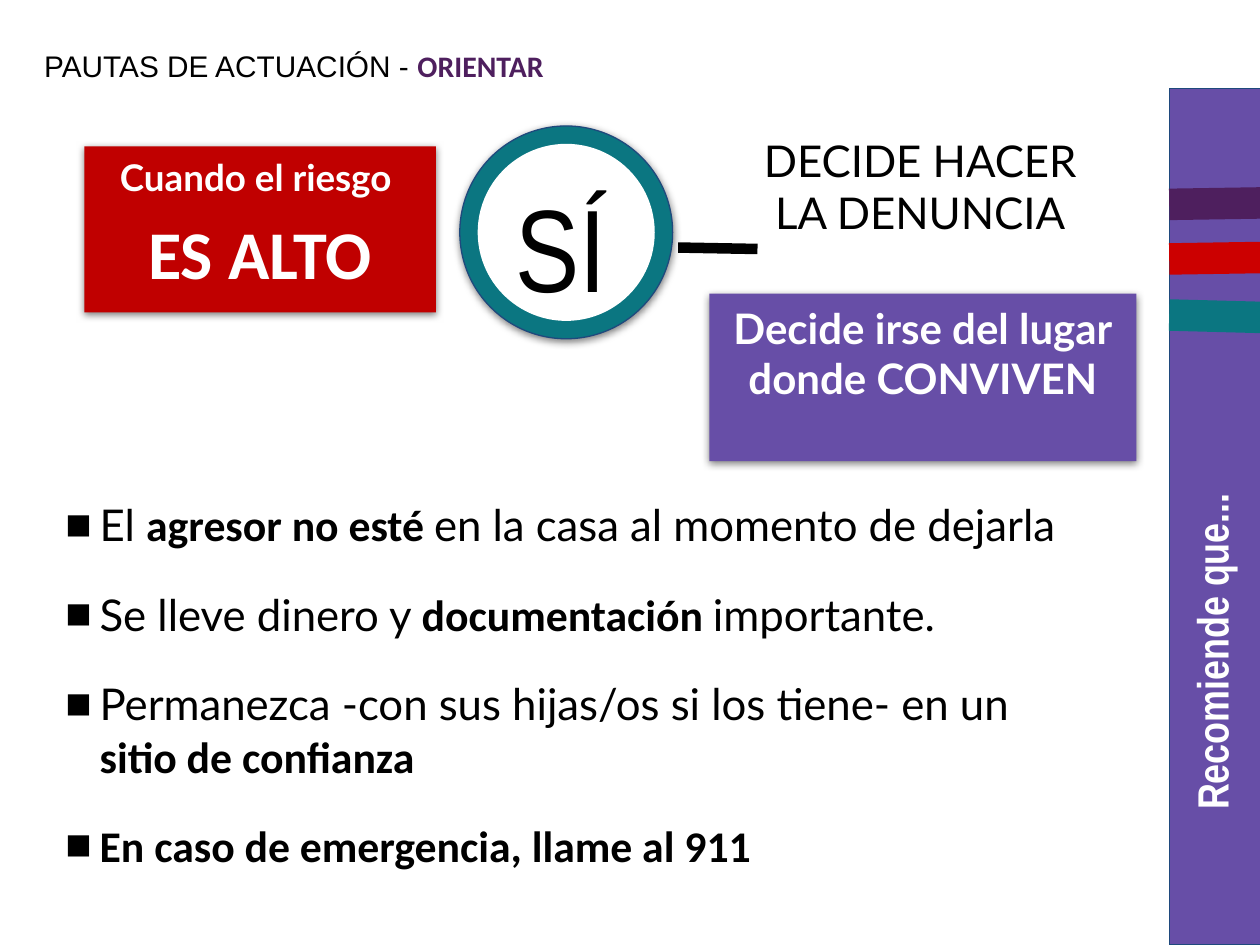
from collections import namedtuple

from lxml import etree
from pptx import Presentation
from pptx.dml.color import RGBColor
from pptx.enum.shapes import MSO_CONNECTOR as Connector, MSO_SHAPE as Shape
from pptx.enum.text import MSO_ANCHOR as Anchor, PP_ALIGN as Align
from pptx.oxml.ns import qn
from pptx.util import Cm, Pt

Box = namedtuple("Box", "left top width height")

BLACK, WHITE, NAVY = "000000", "FFFFFF", "1F497D"
PURPLE, PLUM, TEAL = "674EA7", "4E1F5E", "0B7681"
DARK_RED, RED = "C00000", "CC0000"


def color(value):
    return RGBColor.from_string(value)


def inside(box, left, top, width, height):
    """Return a box whose position is given relative to another box."""
    return Box(box.left + left, box.top + top, width, height)


def style(size, font, fill=BLACK, bold=False):
    return {"size": Pt(size), "name": font, "bold": bold, "color": fill}


def add_runs(paragraph, runs, **paragraph_format):
    """Fill a paragraph with (text, style) pairs."""
    for name, value in paragraph_format.items():
        setattr(paragraph, name, value)
    for text, run_style in runs:
        run = paragraph.add_run()
        run.text = text
        for name, value in run_style.items():
            if name == "color":
                run.font.color.rgb = color(value)
            else:
                setattr(run.font, name, value)


def write(shape, paragraphs, margin=0.18, anchor=Anchor.TOP, **paragraph_format):
    """Write paragraphs, each a list of (text, style) pairs, and return them."""
    frame = shape.text_frame
    frame_format = {"word_wrap": True, "vertical_anchor": anchor}
    for side in ("left", "top", "right", "bottom"):
        frame_format[f"margin_{side}"] = Cm(margin)
    for name, value in frame_format.items():
        setattr(frame, name, value)
    for index, runs in enumerate(paragraphs):
        paragraph = frame.add_paragraph() if index else frame.paragraphs[0]
        add_runs(paragraph, runs, **paragraph_format)
    return frame.paragraphs


def add_text(slide, box, paragraphs, **text_format):
    shape = slide.shapes.add_textbox(*map(Cm, box))
    return write(shape, paragraphs, **text_format)


def add_shadow(shape):
    effects = shape._element.spPr.find(qn("a:effectLst"))
    shadow = etree.SubElement(effects, qn("a:outerShdw"), blurRad=str(Pt(4.5)),
                              dist=str(Pt(1.5)), dir="5400000", rotWithShape="0")
    shade = etree.SubElement(shadow, qn("a:srgbClr"), val=BLACK)
    etree.SubElement(shade, qn("a:alpha"), val="50000")


def add_filled(slide, kind, box, fill, outline=None, shadow=False):
    shape = slide.shapes.add_shape(kind, *map(Cm, box))
    shape.shadow.inherit = False
    shape.fill.solid()
    shape.fill.fore_color.rgb = color(fill)
    if outline:
        shape.line.color.rgb = color(outline)
        shape.line.width = Pt(0.75)
    else:
        shape.line.fill.background()
    if shadow:
        add_shadow(shape)
    return shape


def add_line(slide, start, end, stroke, width):
    line = slide.shapes.add_connector(Connector.STRAIGHT, *map(Cm, start + end))
    line.line.color.rgb = color(stroke)
    line.line.width = Pt(width)
    etree.SubElement(line._element.spPr, qn("a:effectLst"))


def add_bullet(paragraph, indent):
    properties = paragraph._p.get_or_add_pPr()
    properties.set("marL", str(Cm(indent)))
    properties.set("indent", str(-Cm(indent)))
    etree.SubElement(properties, qn("a:buFont"), typeface="Arial")
    etree.SubElement(properties, qn("a:buChar"), char="■")


def add_heading(slide, box):
    runs = [("PAUTAS DE ACTUACIÓN - ", style(17, "Arial")),
            ("ORIENTAR", style(17, "Calibri", PLUM, True))]
    add_text(slide, box, [runs], margin=0.1, anchor=Anchor.BOTTOM, line_spacing=0.8)


def add_side_band(slide, box):
    add_filled(slide, Shape.RECTANGLE, box, PURPLE, NAVY)
    length, thickness = 13.06, 1.57
    label = add_filled(slide, Shape.RECTANGLE,
                       inside(box, 0.92 - length / 2, 7.41, length, thickness), PURPLE)
    label.rotation = 270
    write(label, [[("Recomiende que...", style(25, "Arial Narrow", WHITE, True))]],
          alignment=Align.LEFT)


def add_stripes(slide, box):
    for stroke, start, end in ((PLUM, 2.34, 2.31), (RED, 3.44, 3.41), (TEAL, 4.57, 4.62)):
        add_line(slide, (box.left, box.top + start),
                 (box.left + box.width, box.top + end), stroke, 18)


def add_risk_card(slide, box):
    card = add_filled(slide, Shape.RECTANGLE, box, DARK_RED, shadow=True)
    write(card, [[("Cuando el riesgo ", style(21, "Lato", WHITE, True))],
                 [("ES ALTO", style(39, "Calibri", WHITE, True))]],
          alignment=Align.CENTER, space_before=Pt(7))


def add_answer(slide, box):
    """Place the ringed answer, its dash and the decision beside it."""
    ring = 0.36
    hole = inside(box, ring, ring, box.width - 2 * ring, box.height - 2 * ring)
    add_text(slide, inside(box, 5.84, -0.03, 6.88, 3.23),
             [[("DECIDE HACER LA DENUNCIA", style(25, "Lato"))]], alignment=Align.CENTER)
    add_filled(slide, Shape.OVAL, box, TEAL, NAVY, shadow=True)
    add_filled(slide, Shape.OVAL, hole, WHITE)
    add_text(slide, inside(box, -0.23, 0.81, 4.52, 3.58),
             [[("SÍ", style(67, "Arial Narrow"))]], alignment=Align.CENTER)
    add_line(slide, (box.left + 6, box.top + 2.48), (box.left + 4.4, box.top + 2.45),
             BLACK, 6)


def add_leaving_card(slide, box):
    card = add_filled(slide, Shape.RECTANGLE, box, PURPLE, shadow=True)
    text_style = style(24, "Lato", WHITE, True)
    write(card, [[("Decide irse del lugar", text_style)], [("donde CONVIVEN", text_style)]],
          alignment=Align.CENTER)


def add_advice(slide, box):
    plain, strong = style(25, "Lato"), style(25, "Calibri", bold=True)
    paragraphs = add_text(slide, box, [
        [("El ", plain), ("agresor no esté ", strong),
         ("en la casa al momento de dejarla", plain)],
        [("Se lleve dinero y ", plain), ("documentación ", strong), ("importante.", plain)],
        [("Permanezca -con sus hijas/os si los tiene- en un ", plain),
         ("sitio de confianza", strong)],
        [("En caso de emergencia, llame al 911", strong)],
    ])
    for index, paragraph in enumerate(paragraphs):
        paragraph.space_before = Pt(21.1 if index else 0)
        add_bullet(paragraph, 0.69)


def main():
    presentation = Presentation()
    presentation.slide_width, presentation.slide_height = Cm(25.4), Cm(19.05)
    slide = presentation.slides.add_slide(presentation.slide_layouts[6])
    band = Box(23.57, 1.78, 1.9, 17.27)
    add_heading(slide, Box(0.79, 0.89, 21.82, 0.89))
    add_side_band(slide, band)
    add_risk_card(slide, Box(1.7, 2.95, 7.09, 3.35))
    add_answer(slide, Box(9.27, 2.54, 4.29, 4.29))
    add_leaving_card(slide, Box(14.3, 5.92, 8.61, 3.38))
    add_advice(slide, Box(1.14, 9.86, 21.11, 6.6))
    add_stripes(slide, band)
    presentation.save("out.pptx")


if __name__ == "__main__":
    main()
